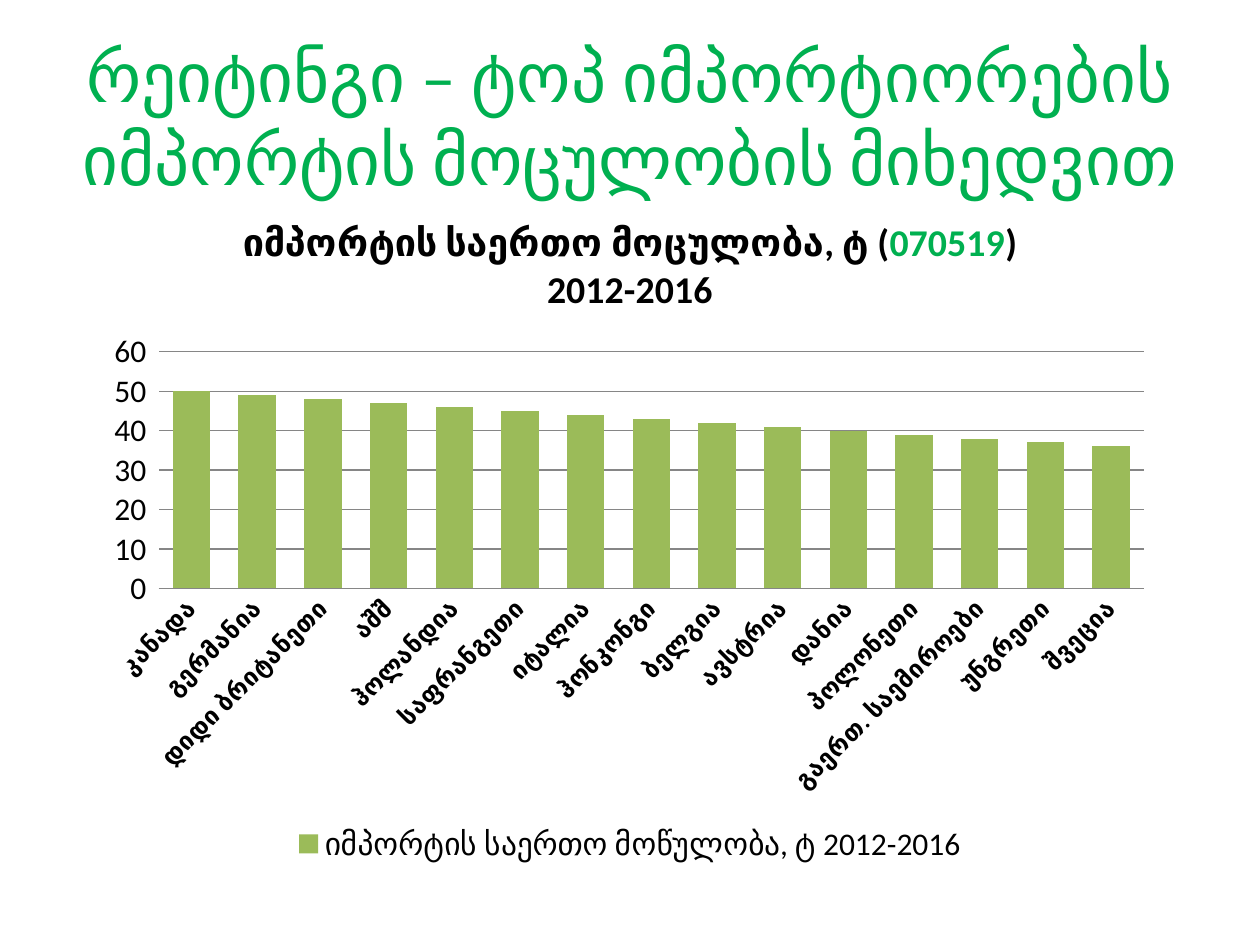
from lxml import etree
from pptx import Presentation
from pptx.chart.data import CategoryChartData
from pptx.dml.color import RGBColor
from pptx.enum.chart import XL_CHART_TYPE, XL_LEGEND_POSITION, XL_TICK_MARK
from pptx.enum.text import MSO_ANCHOR, PP_ALIGN
from pptx.oxml.ns import qn
from pptx.util import Inches, Pt

# Content
HEADING = "რეიტინგი – ტოპ იმპორტიორების იმპორტის მოცულობის მიხედვით"
SERIES_NAME = "იმპორტის საერთო მოწულობა, ტ 2012-2016"
COUNTRIES = ["კანადა", "გერმანია", "დიდი ბრიტანეთი", "აშშ", "ჰოლანდია",
             "საფრანგეთი", "იტალია", "ჰონკონგი", "ბელგია", "ავსტრია", "დანია",
             "პოლონეთი", "გაერთ. საემიროები", "უნგრეთი", "შვეცია"]
VOLUMES = [50, 49, 48, 47, 46, 45, 44, 43, 42, 41, 40, 39, 38, 37, 36]

# Style
FONT = "Calibri"
GREEN = RGBColor(0x00, 0xB0, 0x50)
BLACK = RGBColor(0, 0, 0)
BAR_GREEN = RGBColor(0x9B, 0xBB, 0x59)
GRID_GRAY = RGBColor(0x86, 0x86, 0x86)
CHART_TITLE = [[("იმპორტის საერთო მოცულობა, ტ (", BLACK), ("070519", GREEN), (")", BLACK)],
               [("2012-2016", BLACK)]]
PLOT_SHARES = {"x": 0.06, "y": 0.235, "w": 0.92, "h": 0.35}


def style_font(font, size, color, bold=False):
    font.name = FONT
    font.size = Pt(size)
    font.bold = bold
    font.color.rgb = color


def add_heading(slide):
    box = slide.shapes.add_textbox(Inches(0.5), Inches(0.3), Inches(9), Inches(1.25))
    frame = box.text_frame
    frame.word_wrap = True
    frame.vertical_anchor = MSO_ANCHOR.MIDDLE
    frame.text = HEADING
    paragraph = frame.paragraphs[0]
    paragraph.alignment = PP_ALIGN.CENTER
    style_font(paragraph.runs[0].font, 39.6, GREEN)


def add_chart_title(chart):
    frame = chart.chart_title.text_frame
    for index, line in enumerate(CHART_TITLE):
        paragraph = frame.add_paragraph() if index else frame.paragraphs[0]
        for text, color in line:
            run = paragraph.add_run()
            run.text = text
            style_font(run.font, 21.6, color, bold=True)
    chart.chart_title.include_in_layout = False


def place_plot(chart):
    plot_area = chart.plots[0]._element.getparent()
    layout = plot_area.find(qn("c:layout"))
    if layout is None:
        layout = etree.Element(qn("c:layout"))
        plot_area.insert(0, layout)
    manual = etree.SubElement(layout, qn("c:manualLayout"))
    settings = {"layoutTarget": "inner", "xMode": "edge", "yMode": "edge", **PLOT_SHARES}
    for name, value in settings.items():
        etree.SubElement(manual, qn(f"c:{name}")).set("val", str(value))


def add_import_chart(slide):
    data = CategoryChartData()
    data.categories = COUNTRIES
    data.add_series(SERIES_NAME, VOLUMES)
    chart = slide.shapes.add_chart(
        XL_CHART_TYPE.COLUMN_CLUSTERED,
        Inches(0.75), Inches(1.53), Inches(8.5), Inches(5.37), data).chart
    style_font(chart.font, 18, BLACK)
    add_chart_title(chart)

    # Columns
    plot = chart.plots[0]
    plot.gap_width = 75
    plot.vary_by_categories = False
    fill = plot.series[0].format.fill
    fill.solid()
    fill.fore_color.rgb = BAR_GREEN
    place_plot(chart)

    # Axes
    countries = chart.category_axis
    countries.major_tick_mark = XL_TICK_MARK.NONE
    countries.format.line.color.rgb = GRID_GRAY
    style_font(countries.tick_labels.font, 14, BLACK, bold=True)
    body = countries._element.find(qn("c:txPr")).find(qn("a:bodyPr"))
    body.set("rot", "-2700000")
    volumes = chart.value_axis
    volumes.minimum_scale, volumes.maximum_scale, volumes.major_unit = 0, 60, 10
    volumes.major_tick_mark = XL_TICK_MARK.OUTSIDE
    volumes.format.line.fill.background()
    volumes.major_gridlines.format.line.color.rgb = GRID_GRAY
    volumes.tick_labels.number_format = "0"
    volumes.tick_labels.number_format_is_linked = False

    # Legend
    chart.has_legend = True
    chart.legend.position = XL_LEGEND_POSITION.BOTTOM
    chart.legend.include_in_layout = False


def main():
    presentation = Presentation()
    presentation.slide_width = Inches(10)
    presentation.slide_height = Inches(7.5)
    slide = presentation.slides.add_slide(presentation.slide_layouts[6])
    add_heading(slide)
    add_import_chart(slide)
    presentation.save("out.pptx")


if __name__ == "__main__":
    main()
